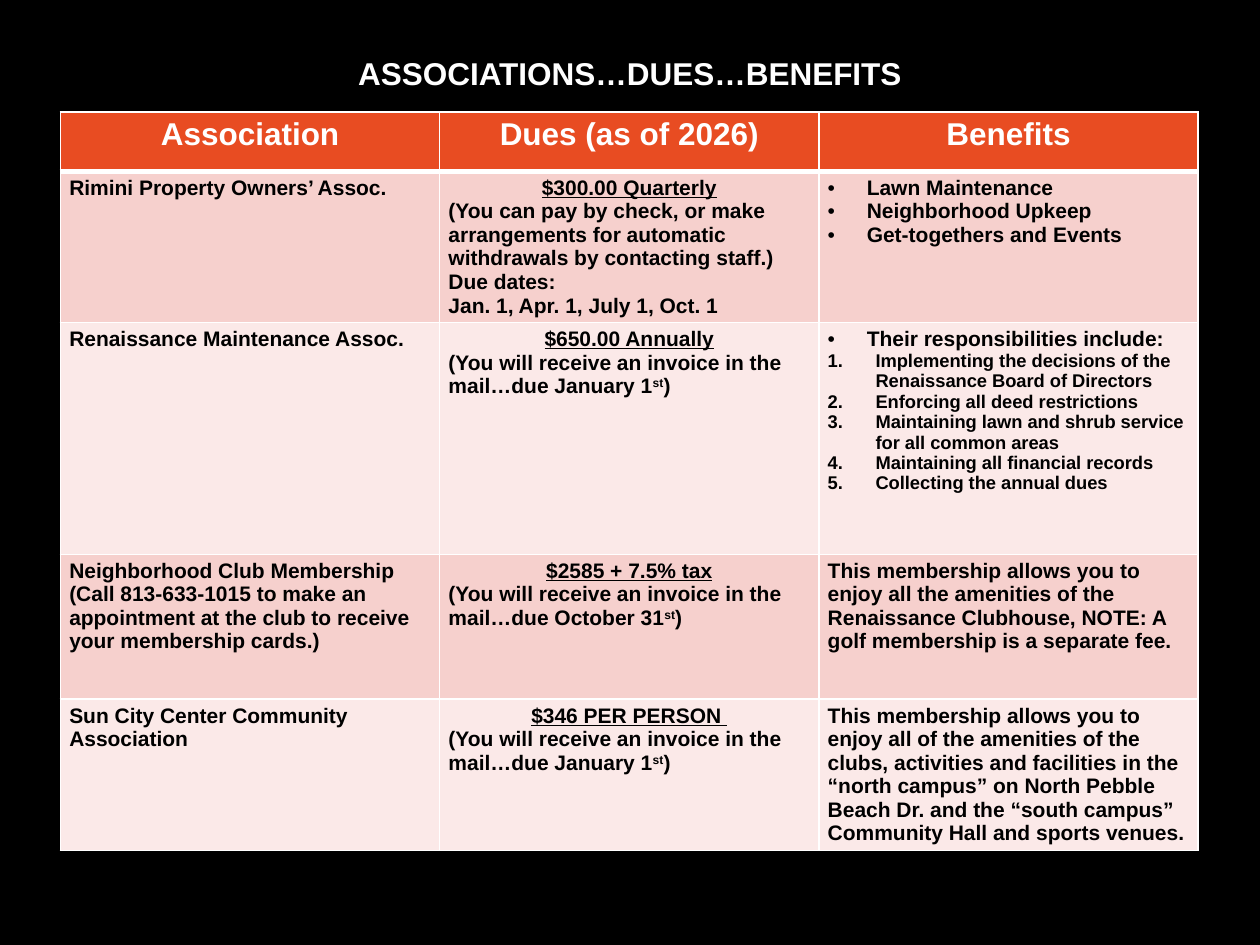
import pptx
import pptx.util
import pptx.dml.color
import pptx.enum.text
import pptx.oxml
import pptx.oxml.ns
from pptx.util import Inches

COLORS = {
    "background": "000000",
    "header": "E84C22",
    "band_dark": "F6D0CD",
    "band_light": "FBE9E8",
    "light_text": "FFFFFF",
    "dark_text": "000000",
    "border": "FFFFFF",
}
FONT = "Arial"
COLUMN_WIDTH = 3.01
ROW_HEIGHTS = [0.47, 0.93, 1.84, 1.15, 1.15]
HEADINGS = ["Association", "Dues (as of 2026)", "Benefits"]


def rgb(name):
    return pptx.dml.color.RGBColor.from_string(COLORS[name])


def xml_element(markup):
    return pptx.oxml.parse_xml(markup.replace(">", f" {pptx.oxml.ns.nsdecls('a')}>", 1)
                               if not markup.split(">", 1)[0].endswith("/")
                               else markup.replace("/>", f" {pptx.oxml.ns.nsdecls('a')}/>", 1))


def entry(text, **options):
    """One paragraph: its text (or a list of plain and raised parts) and format."""
    return text, options


def amount(text):
    return entry(text, centered=True, underline=True)


def invoice(due_date):
    return entry([f"(You will receive an invoice in the mail…due {due_date}", "st", ")"])


def bullet(text):
    return entry(text, marker='<a:buChar char="•"/>', indent=0.31)


def numbered(text):
    return entry(text, marker='<a:buAutoNum type="arabicPeriod"/>', indent=0.38, size=10.5)


ROWS = [
    [
        [entry("Rimini Property Owners’ Assoc.")],
        [amount("$300.00 Quarterly"),
         entry("(You can pay by check, or make arrangements for automatic "
               "withdrawals by contacting staff.)"),
         entry("Due dates:"),
         entry("Jan. 1, Apr. 1, July 1, Oct. 1")],
        [bullet("Lawn Maintenance"),
         bullet("Neighborhood Upkeep"),
         bullet("Get-togethers and Events")],
    ],
    [
        [entry("Renaissance Maintenance Assoc.")],
        [amount("$650.00 Annually"), invoice("January 1")],
        [bullet("Their responsibilities include:"),
         numbered("Implementing the decisions of the Renaissance Board of Directors"),
         numbered("Enforcing all deed restrictions"),
         numbered("Maintaining lawn and shrub service for all common areas"),
         numbered("Maintaining all financial records"),
         numbered("Collecting the annual dues")],
    ],
    [
        [entry("Neighborhood Club Membership"),
         entry("(Call 813-633-1015 to make an appointment at the club to receive "
               "your membership cards.)")],
        [amount("$2585 + 7.5% tax"), invoice("October 31")],
        [entry("This membership allows you to enjoy all the amenities of the "
               "Renaissance Clubhouse, NOTE: A golf membership is a separate fee.")],
    ],
    [
        [entry("Sun City Center Community Association")],
        [amount("$346 PER PERSON "), invoice("January 1")],
        [entry("This membership allows you to enjoy all of the amenities of the clubs, "
               "activities and facilities in the “north campus” on North Pebble Beach Dr. "
               "and the “south campus” Community Hall and sports venues.")],
    ],
]


def write_text(para, text, size=12, color="dark_text", centered=False,
               underline=False, marker=None, indent=0):
    """Fill a paragraph; every second part of a list is superscript."""
    if marker:
        properties = para._p.get_or_add_pPr()
        properties.set("marL", str(Inches(indent)))
        properties.set("indent", str(-Inches(indent)))
        if "buChar" in marker:
            properties.append(xml_element('<a:buFont typeface="Arial"/>'))
        properties.append(xml_element(marker))
    if centered:
        para.alignment = pptx.enum.text.PP_ALIGN.CENTER
    parts = [text] if isinstance(text, str) else text
    for index, part in enumerate(parts):
        span = para.add_run()
        span.text = part
        span.font.name = FONT
        span.font.size = pptx.util.Pt(size)
        span.font.bold = True
        span.font.underline = underline
        span.font.color.rgb = rgb(color)
        if index % 2:
            span._r.get_or_add_rPr().set("baseline", "30000")


def set_borders(cell, top=1, bottom=1):
    properties = cell._tc.get_or_add_tcPr()
    for side, points in (("L", 1), ("R", 1), ("T", top), ("B", bottom)):
        properties.append(xml_element(
            f'<a:ln{side} w="{pptx.util.Pt(points)}"><a:solidFill>'
            f'<a:srgbClr val="{COLORS["border"]}"/></a:solidFill></a:ln{side}>'))


def fill_cell(cell, entries, fill, **borders):
    cell.margin_left = cell.margin_right = Inches(0.07)
    cell.margin_top = cell.margin_bottom = Inches(0.04)
    set_borders(cell, **borders)
    cell.fill.solid()
    cell.fill.fore_color.rgb = rgb(fill)
    for index, (text, options) in enumerate(entries):
        frame = cell.text_frame
        para = frame.add_paragraph() if index else frame.paragraphs[0]
        write_text(para, text, **options)


def add_dues_table(page):
    box = page.shapes.add_table(len(ROW_HEIGHTS), len(HEADINGS), Inches(0.48),
                                Inches(0.89), Inches(9.04), Inches(6.01))
    table = box.table
    table.horz_banding = False
    for column in table.columns:
        column.width = Inches(COLUMN_WIDTH)
    for row, height in zip(table.rows, ROW_HEIGHTS):
        row.height = Inches(height)
    box.height = Inches(6.01)

    # Header row, set off by a thick rule
    for column, heading in enumerate(HEADINGS):
        title = entry(heading, size=18, color="light_text", centered=True)
        fill_cell(table.cell(0, column), [title], "header", bottom=3)

    # Association rows in alternating bands
    for number, cells in enumerate(ROWS, start=1):
        band = "band_dark" if number % 2 else "band_light"
        for column, entries in enumerate(cells):
            fill_cell(table.cell(number, column), entries, band,
                      top=3 if number == 1 else 1)


def add_title(page):
    box = page.shapes.title
    box.left, box.top = Inches(0.69), Inches(0.26)
    box.width, box.height = Inches(8.62), Inches(0.63)
    box.text_frame.vertical_anchor = pptx.enum.text.MSO_ANCHOR.MIDDLE
    write_text(box.text_frame.paragraphs[0], "ASSOCIATIONS…DUES…BENEFITS",
               size=18, color="light_text", centered=True)


def main():
    deck = pptx.Presentation()
    deck.slide_width, deck.slide_height = Inches(10), Inches(7.5)
    page = deck.slides.add_slide(deck.slide_layouts[5])
    page.background.fill.solid()
    page.background.fill.fore_color.rgb = rgb("background")
    add_title(page)
    add_dues_table(page)
    deck.save("out.pptx")


if __name__ == "__main__":
    main()
